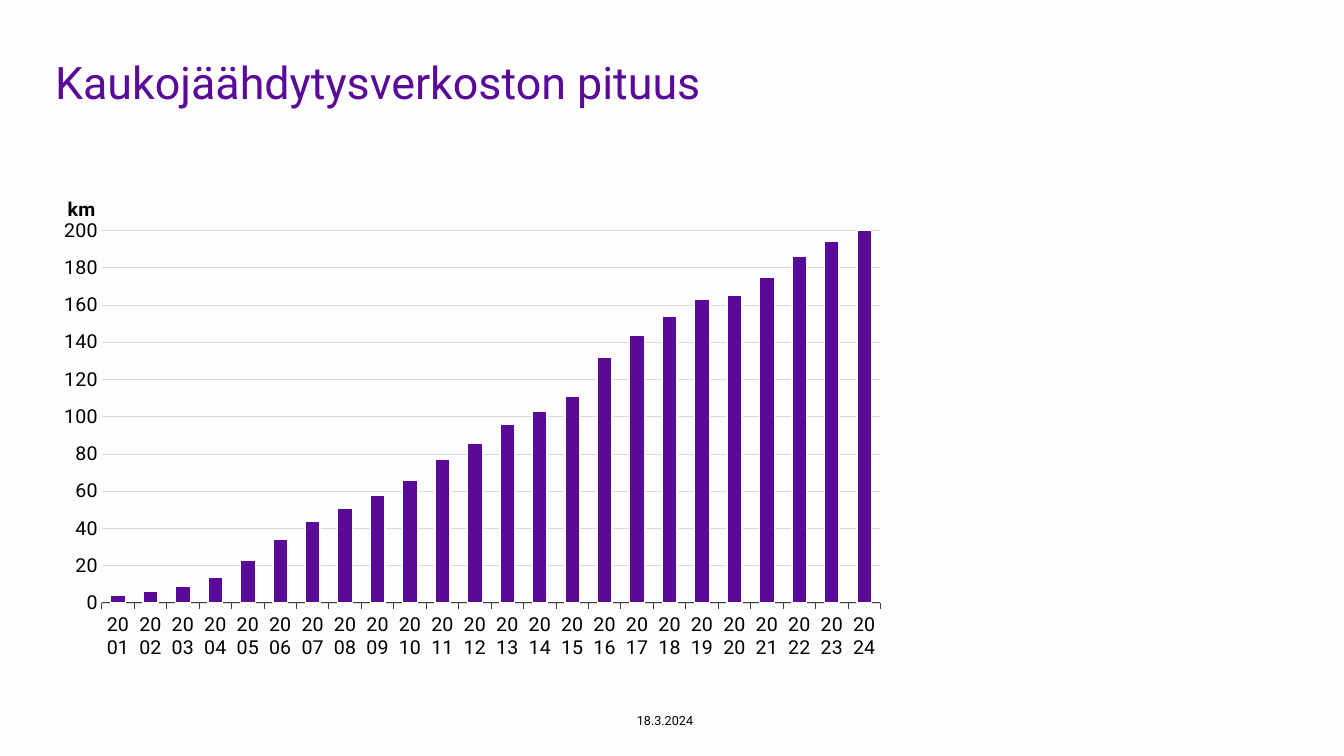
from dataclasses import dataclass

import pptx
import pptx.chart.data
import pptx.dml.color
import pptx.enum.chart
import pptx.enum.text
import pptx.oxml
import pptx.oxml.ns
import pptx.util

HEADING = "Kaukojäähdytysverkoston pituus"
DATE = "18.3.2024"
UNIT = "km"
FIRST_YEAR = 2001
LENGTHS = [4, 6, 9, 14, 23, 34, 44, 51, 58, 66, 77, 86,
           96, 103, 111, 132, 144, 154, 163, 165, 175, 186, 194, 203]

SLIDE = (1344, 756)
HEADING_BOX = (55, 56, 1233, 110)
DATE_BOX = (609, 701, 112, 40)
CHART_BOX = (54, 181, 840, 479)
PLOT_BOX = (102, 232, 779, 381)
UNIT_AT = (64, 192)


@dataclass(frozen=True)
class Theme:
    font: str = "Roboto"
    purple: str = "590A99"
    ink: str = "000000"
    paper: str = "FEFDFD"
    bar_edge: str = "FFFFFF"
    axis: str = "404040"
    grid: str = "D9D9D9"
    heading: int = 32
    label: int = 14
    date: int = 9


THEME = Theme()


def px(length):
    return round(length * 914400 / 100.8)


def place(box):
    return [px(length) for length in box]


def rgb(code):
    return pptx.dml.color.RGBColor.from_string(code)


def style_font(font, size, color=THEME.ink, bold=False):
    font.name = THEME.font
    font.size = pptx.util.Pt(size)
    font.bold = bold
    font.color.rgb = rgb(color)


def style_line(line, color, width):
    line.color.rgb = rgb(color)
    line.width = pptx.util.Pt(width)


def write(frame, text, size, color=THEME.ink, bold=False, align="LEFT",
          anchor="TOP", right=0, spacing=1.0):
    frame.word_wrap = True
    frame.auto_size = pptx.enum.text.MSO_AUTO_SIZE.NONE
    frame.vertical_anchor = getattr(pptx.enum.text.MSO_ANCHOR, anchor)
    frame.margin_left, frame.margin_right = 0, px(right)
    frame.margin_top = frame.margin_bottom = px(5)
    paragraph = frame.paragraphs[0]
    paragraph.alignment = getattr(pptx.enum.text.PP_ALIGN, align)
    paragraph.line_spacing = spacing
    run = paragraph.add_run()
    run.text = text
    style_font(run.font, size, color, bold)


def replace_layout(parent, inner=False, **fractions):
    for old in parent.findall(pptx.oxml.ns.qn("c:layout")):
        parent.remove(old)
    target = '<c:layoutTarget val="inner"/>' if inner else ""
    modes = "".join(f'<c:{key}Mode val="edge"/>' for key in "xy")
    values = "".join(f'<c:{key} val="{value:.3f}"/>' for key, value in fractions.items())
    layout = pptx.oxml.parse_xml(
        f'<c:layout {pptx.oxml.ns.nsdecls("c")}><c:manualLayout>'
        f"{target}{modes}{values}</c:manualLayout></c:layout>")
    heading = parent.find(pptx.oxml.ns.qn("c:tx"))
    parent.insert(0 if heading is None else 1, layout)


def add_length_chart(slide):
    data = pptx.chart.data.CategoryChartData()
    data.categories = [str(FIRST_YEAR + step) for step in range(len(LENGTHS))]
    data.add_series("Series 1", LENGTHS)
    chart = slide.shapes.add_chart(
        pptx.enum.chart.XL_CHART_TYPE.COLUMN_CLUSTERED, *place(CHART_BOX), data).chart
    chart.has_legend = False
    chart.has_title = False
    style_font(chart.font, THEME.label)

    bars = chart.plots[0]
    bars.gap_width = 120
    bars.vary_by_categories = False
    lengths = bars.series[0]
    lengths.format.fill.solid()
    lengths.format.fill.fore_color.rgb = rgb(THEME.purple)
    style_line(lengths.format.line, THEME.bar_edge, 1)

    ticks = pptx.enum.chart.XL_TICK_MARK
    years, km = chart.category_axis, chart.value_axis
    for axis, mark in ((years, ticks.OUTSIDE), (km, ticks.NONE)):
        axis.major_tick_mark = mark
        axis.minor_tick_mark = ticks.NONE
        style_font(axis.tick_labels.font, THEME.label)
    years.has_major_gridlines = False
    style_line(years.format.line, THEME.axis, 0.75)
    years._element.find(pptx.oxml.ns.qn("c:txPr")).bodyPr.set("rot", "0")

    km.minimum_scale, km.maximum_scale, km.major_unit = 0, 200, 20
    km.format.line.fill.background()
    km.has_major_gridlines = True
    style_line(km.major_gridlines.format.line, THEME.grid, 0.5)

    left, top, width, height = CHART_BOX
    unit = km.axis_title
    unit_run = unit.text_frame.paragraphs[0].add_run()
    unit_run.text = UNIT
    style_font(unit_run.font, THEME.label, bold=True)
    body = unit._element.find(".//" + pptx.oxml.ns.qn("a:bodyPr"))
    body.set("rot", "0")
    body.set("vert", "horz")
    replace_layout(unit._element, x=(UNIT_AT[0] - left) / width,
                   y=(UNIT_AT[1] - top) / height)

    plot_left, plot_top, plot_width, plot_height = PLOT_BOX
    replace_layout(
        chart._chartSpace.chart.plotArea, inner=True,
        x=(plot_left - left) / width, y=(plot_top - top) / height,
        w=plot_width / width, h=plot_height / height)


def main():
    deck = pptx.Presentation()
    deck.slide_width, deck.slide_height = place(SLIDE)
    slide = deck.slides.add_slide(deck.slide_layouts[5])
    slide.background.fill.solid()
    slide.background.fill.fore_color.rgb = rgb(THEME.paper)

    heading = slide.shapes.title
    heading.left, heading.top, heading.width, heading.height = place(HEADING_BOX)
    write(heading.text_frame, HEADING, THEME.heading, color=THEME.purple,
          right=10, spacing=0.9)
    date = slide.shapes.add_textbox(*place(DATE_BOX))
    write(date.text_frame, DATE, THEME.date, align="CENTER", anchor="MIDDLE")
    add_length_chart(slide)
    deck.save("out.pptx")


if __name__ == "__main__":
    main()
